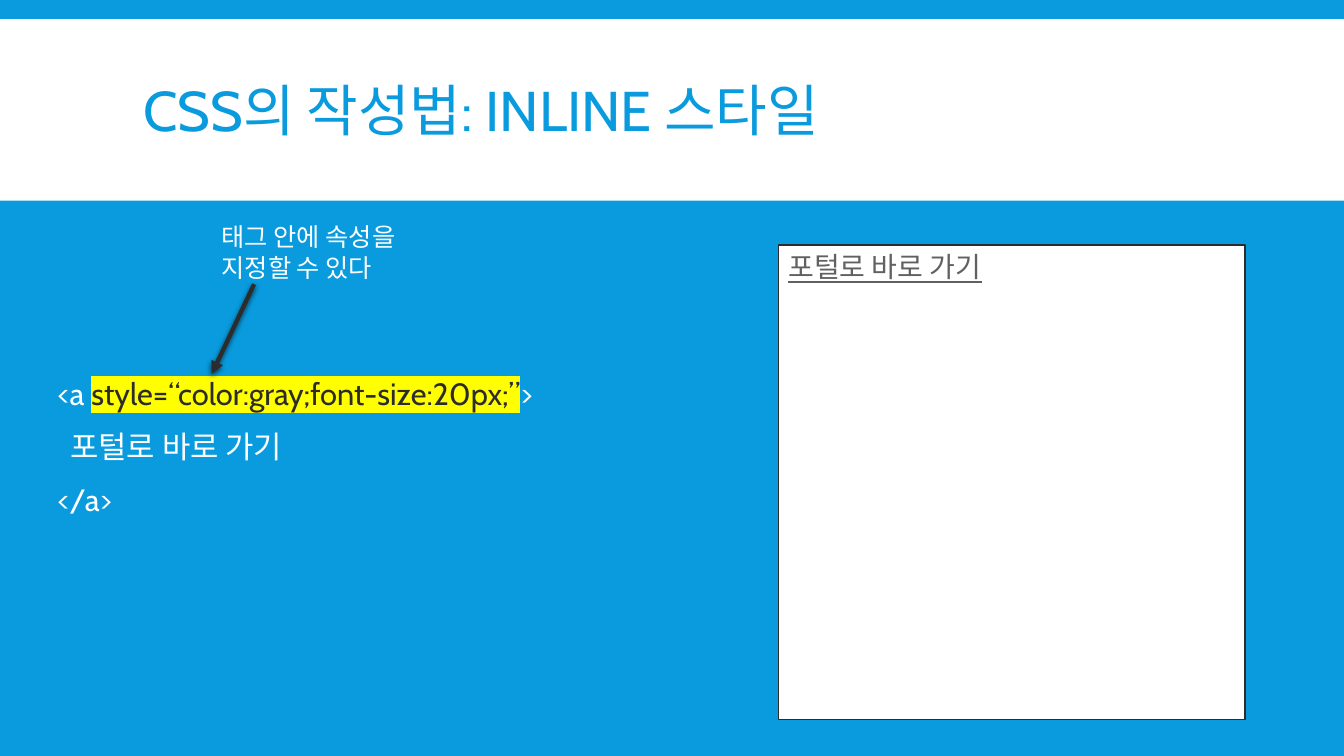
from pptx import Presentation
from pptx.dml.color import RGBColor as Rgb
from pptx.enum.shapes import MSO_CONNECTOR as Link, MSO_SHAPE as Kind
from pptx.enum.text import MSO_ANCHOR as Anchor, PP_ALIGN as Align
from pptx.oxml import parse_xml
from pptx.oxml.ns import nsdecls
from pptx.util import Inches, Pt

HUES = {"blue": "099BDD", "white": "FFFFFF", "dark": "2C2C2C",
        "gray": "616161", "mark": "FFFF00", "black": "000000"}
LINK = "포털로 바로 가기"
CODE = {"line_spacing": 0.9, "space_before": Pt(12), "space_after": Pt(2)}


def hue(name):
    """Return a named colour."""
    return Rgb.from_string(HUES[name])


def node(body):
    """Parse a DrawingML snippet whose root tag ends with a slot for namespaces."""
    return parse_xml(body.replace("@", nsdecls("a"), 1))


def put(item, vals):
    """Set attributes from a dict of format values."""
    for key, val in vals.items():
        setattr(item, key, val)


def box(at):
    """Turn left, top, width and height into lengths."""
    return [Inches(v) for v in at]


def write(para, text, size, color, mark=None, **font):
    """Add a run to a paragraph, with a highlight if asked."""
    run = para.add_run()
    run.text = text
    put(run.font, {"size": Pt(size), "name": "Cabin", **font})
    run.font.color.rgb = hue(color)
    if mark:
        fill = run.font.color._xFill if hasattr(run.font.color, "_xFill") else None
        high = node(f'<a:highlight @><a:srgbClr val="{HUES[mark]}"/></a:highlight>')
        if fill is None:
            fill = run._r.rPr.find("{*}solidFill")
        fill.addnext(high)


def add_rect(slide, at, line=None):
    """Add a white rectangle with an optional thin border."""
    rect = slide.shapes.add_shape(Kind.RECTANGLE, *box(at))
    rect.shadow.inherit = False
    rect.fill.solid()
    rect.fill.fore_color.rgb = hue("white")
    if line:
        rect.line.color.rgb = hue(line)
        rect.line.width = Pt(1)
    else:
        rect.line.fill.background()
    return rect


def add_text(slide, at):
    """Add a wrapping text box and return its frame."""
    frame = slide.shapes.add_textbox(*box(at)).text_frame
    frame.word_wrap = True
    return frame


def add_title(slide):
    """Fill and place the title."""
    title = slide.shapes.title
    put(title, dict(zip(("left", "top", "width", "height"),
                        box((1.32, 0.31, 10.7, 1.65)))))
    title.text_frame.vertical_anchor = Anchor.MIDDLE
    para = title.text_frame.paragraphs[0]
    put(para, {"alignment": Align.LEFT, "line_spacing": 0.85})
    write(para, "CSS의 작성법: INLINE 스타일", 40, "blue")


def add_code(slide):
    """Add the tag sample with its marked style attribute."""
    frame = add_text(slide, (0.47, 3.71, 5.08, 1.71))
    lines = [
        [("<a ", "white"),
         ("style=“color:gray;font-size:20px;”", "dark", "mark"),
         (">", "white")],
        [(LINK, "white")],
        [("</a>", "white")],
    ]
    for i, parts in enumerate(lines):
        para = frame.add_paragraph() if i else frame.paragraphs[0]
        put(para, CODE)
        for text, *look in parts:
            write(para, text, 22, *look)
    inner = frame.paragraphs[1]._p.get_or_add_pPr()
    inner.set("marL", str(Inches(0.13)))


def add_view(slide):
    """Add the page preview with its gray link."""
    view = add_rect(slide, (7.72, 2.43, 4.63, 4.71), "dark")
    view.text_frame.vertical_anchor = Anchor.TOP
    para = view.text_frame.paragraphs[0]
    para.alignment = Align.LEFT
    write(para, LINK, 20, "gray", underline=True)


def add_arrow(slide, ends):
    """Add a dark arrow with a soft shadow below it."""
    arrow = slide.shapes.add_connector(Link.STRAIGHT, *box(ends))
    arrow.line.color.rgb = hue("dark")
    arrow.line.width = Pt(3)
    arrow.line._get_or_add_ln().append(node('<a:tailEnd @ type="triangle"/>'))
    arrow._element.spPr.append(node(
        f'<a:effectLst @><a:outerShdw blurRad="{Pt(4)}" dist="{Pt(1.2)}" '
        f'dir="5400000" rotWithShape="0"><a:srgbClr val="{HUES["black"]}">'
        '<a:alpha val="68000"/></a:srgbClr></a:outerShdw></a:effectLst>'))


def main():
    """Build the slide and save it."""
    deck = Presentation()
    put(deck, {"slide_width": Inches(13.33), "slide_height": Inches(7.5)})
    slide = deck.slides.add_slide(deck.slide_layouts[5])
    slide.background.fill.solid()
    slide.background.fill.fore_color.rgb = hue("blue")
    band = add_rect(slide, (0, 0.19, 13.33, 1.8))
    slide.shapes._spTree.insert(2, band._element)
    add_title(slide)
    add_code(slide)
    add_view(slide)
    add_arrow(slide, (2.52, 2.82, 2.1, 3.71))
    note = add_text(slide, (2.1, 2.15, 2.48, 0.71))
    write(note.paragraphs[0], "태그 안에 속성을 지정할 수 있다", 18, "white")
    deck.save("out.pptx")


main()
